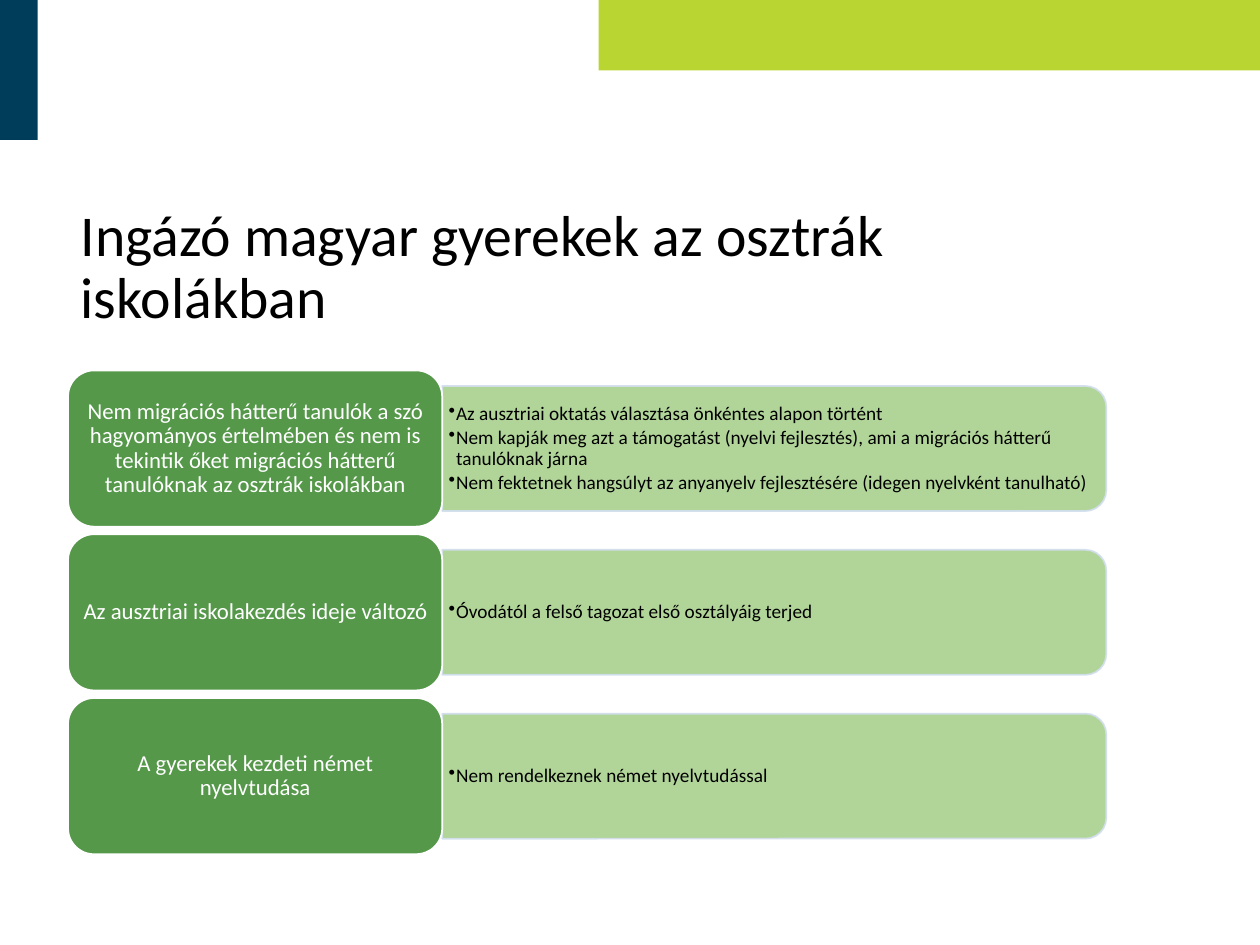
from pptx import Presentation, util as u
from pptx.dml.color import RGBColor
from pptx.enum import shapes, text
from pptx.oxml.ns import qn
from lxml import etree

WIDTH, HEIGHT = 10, 7.5
LEFT, TOP = 0.54, 2.94
PITCH, ROW_HEIGHT = 1.3, 1.24
LABEL_WIDTH, PANEL_WIDTH = 2.97, 5.27
PANEL_SHARE = 0.8  # panel height as a share of its row

ROWS = [
    ("Nem migrációs hátterű tanulók a szó hagyományos értelmében és nem is "
     "tekintik őket migrációs hátterű tanulóknak az osztrák iskolákban",
     ["Az ausztriai oktatás választása önkéntes alapon történt",
      "Nem kapják meg azt a támogatást (nyelvi fejlesztés), ami a migrációs "
      "hátterű tanulóknak járna",
      "Nem fektetnek hangsúlyt az anyanyelv fejlesztésére (idegen nyelvként "
      "tanulható)"]),
    ("Az ausztriai iskolakezdés ideje változó",
     ["Óvodától a felső tagozat első osztályáig terjed"]),
    ("A gyerekek kezdeti német nyelvtudása",
     ["Nem rendelkeznek német nyelvtudással"]),
]


def colour(hex_string):
    return RGBColor.from_string(hex_string)


def inches(*lengths):
    return [u.Inches(length) for length in lengths]


def add_block(page, kind, box, fill, line=None):
    block = page.shapes.add_shape(kind, *inches(*box))
    block.shadow.inherit = False
    block.fill.solid()
    block.fill.fore_color.rgb = colour(fill)
    if line:
        block.line.color.rgb = colour(line)
        block.line.width = u.Pt(1)
    else:
        block.line.fill.background()
    return block


def set_opacity(block, percent):
    for tone in block._element.spPr.iter(qn("a:srgbClr")):
        etree.SubElement(tone, qn("a:alpha"), val=str(percent * 1000))


def set_frame(frame, side, end):
    frame.word_wrap = True
    frame.auto_size = text.MSO_AUTO_SIZE.NONE
    frame.vertical_anchor = text.MSO_ANCHOR.MIDDLE
    frame.margin_left = frame.margin_right = u.Inches(side)
    frame.margin_top = frame.margin_bottom = u.Inches(end)


def add_span(para, words, size, hex_string):
    para.line_spacing = 0.9
    span = para.add_run()
    span.text = words
    span.font.name = "Calibri"
    span.font.size = u.Pt(size)
    span.font.color.rgb = colour(hex_string)


def set_bullet(para, indent):
    properties = para._p.get_or_add_pPr()
    properties.set("marL", str(u.Inches(indent)))
    properties.set("indent", str(-u.Inches(indent)))
    etree.SubElement(properties, qn("a:buChar"), char="•")


def add_corner_bars(page):
    rectangle = shapes.MSO_SHAPE.RECTANGLE
    add_block(page, rectangle, (4.75, 0, WIDTH - 4.75, 0.56), "B9D531")
    add_block(page, rectangle, (0, 0, 0.3, 1.11), "003D5B")


def set_title(page, box, words):
    title = page.shapes.title
    title.left, title.top, title.width, title.height = inches(*box)
    set_frame(title.text_frame, 0.1, 0.05)
    para = title.text_frame.paragraphs[0]
    para.alignment = text.PP_ALIGN.LEFT
    add_span(para, words, 33, "000000")


def add_panel(page, box, points):
    """Draw the panel upright and turn it, so that its right corners are round."""
    left, top, width, height = box
    shift = (width - height) / 2
    panel = add_block(page, shapes.MSO_SHAPE.ROUND_2_SAME_RECTANGLE,
                      (left + shift, top - shift, height, width),
                      "A9D18E", "D2DEEF")
    panel.rotation = 90
    set_opacity(panel, 90)

    inset = 0.05
    frame = page.shapes.add_textbox(
        *inches(left, top + inset, width - inset, height - 2 * inset)).text_frame
    set_frame(frame, 0.05, 0.02)
    for number, point in enumerate(points):
        para = frame.add_paragraph() if number else frame.paragraphs[0]
        para.level = 1
        set_bullet(para, 0.06)
        para.space_after = u.Pt(2)
        add_span(para, point, 11, "000000")


def add_label(page, box, words):
    label = add_block(page, shapes.MSO_SHAPE.ROUNDED_RECTANGLE, box,
                      "55984A", "FFFFFF")
    set_frame(label.text_frame, 0.05, 0.03)
    para = label.text_frame.paragraphs[0]
    para.alignment = text.PP_ALIGN.CENTER
    add_span(para, words, 13, "FFFFFF")


def add_row(page, box, label, points):
    left, top, width, height = box
    panel_height = height * PANEL_SHARE
    panel_top = top + (height - panel_height) / 2
    add_panel(page, (left + LABEL_WIDTH, panel_top, width - LABEL_WIDTH,
                     panel_height), points)
    add_label(page, (left, top, LABEL_WIDTH, height), label)


def main():
    deck = Presentation()
    deck.slide_width, deck.slide_height = inches(WIDTH, HEIGHT)
    page = deck.slides.add_slide(deck.slide_layouts.get_by_name("Title Only"))
    add_corner_bars(page)
    set_title(page, (LEFT, 1.41, 8.24, 1.45),
              "Ingázó magyar gyerekek az osztrák iskolákban")
    for number, (label, points) in enumerate(ROWS):
        box = (LEFT, TOP + number * PITCH, LABEL_WIDTH + PANEL_WIDTH, ROW_HEIGHT)
        add_row(page, box, label, points)
    deck.save("out.pptx")


if __name__ == "__main__":
    main()
